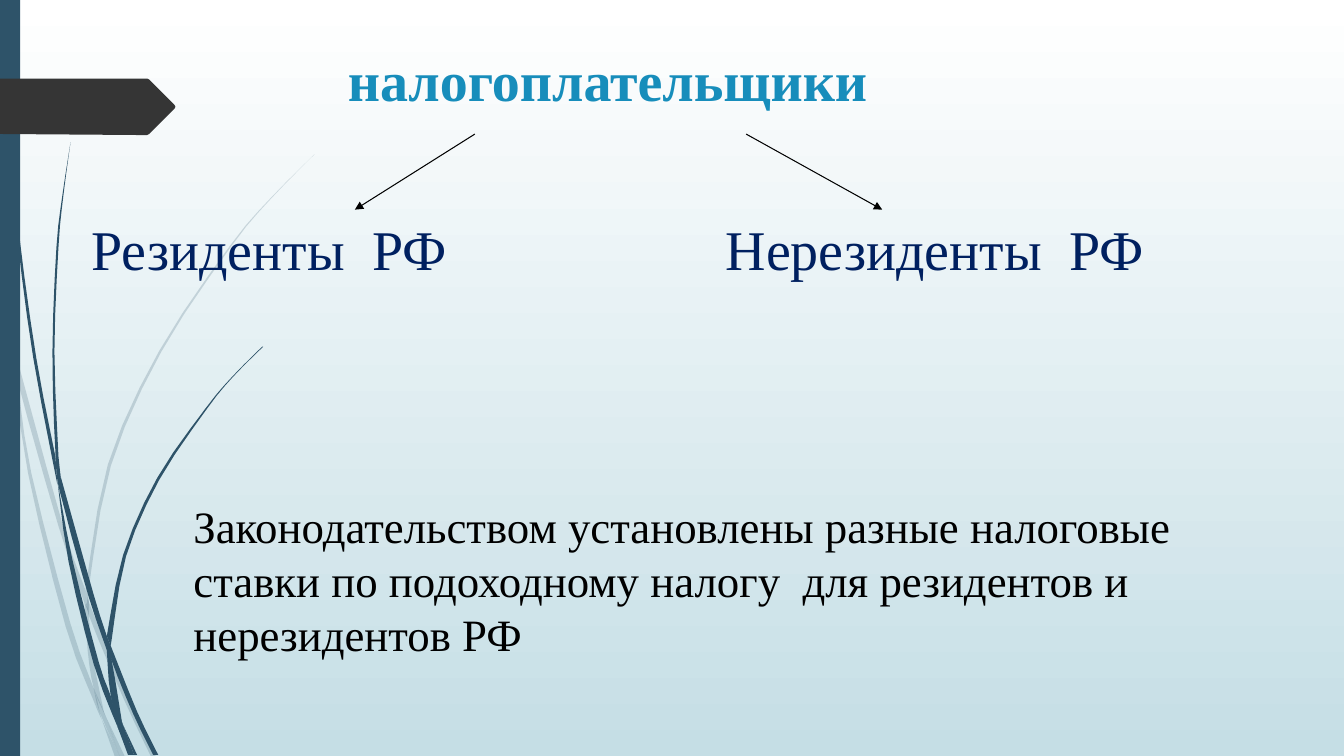
from lxml.etree import SubElement
from pptx import Presentation
from pptx.dml.color import RGBColor
from pptx.enum.shapes import MSO_CONNECTOR, MSO_SHAPE
from pptx.enum.text import MSO_ANCHOR, MSO_AUTO_SIZE, PP_ALIGN
from pptx.oxml.ns import qn
from pptx.util import Inches, Pt

FONT = "Times New Roman"
STEEL = "2E5369"
STEPS = 3

PALE_BLADES = [
    ([(0.11, 3.5), (0.09, 3.22), (0, 2.82)], [(0, 2.99), (0.1, 3.44), (0.11, 3.5)]),
    ([(0.14, 3.45), (0.17, 3.76), (0.58, 5.22), (0.84, 5.99)], [(0.85, 5.86), (0.62, 5.2), (0.14, 3.45)]),
    ([(0.88, 5.96), (0.88, 6.1), (1.23, 6.94), (1.5, 7.51)],
     [(1.55, 7.51), (1.27, 6.92), (0.92, 6.07), (0.88, 5.96)]),
    ([(1.05, 7.11), (1.19, 7.51)], [(1.24, 7.51), (1.05, 7.11)]),
    ([(0.11, 3.5), (0.28, 4.7), (0.65, 6.21), (0.92, 6.93), (1.01, 7.14)],
     [(0.99, 7.07), (0.93, 6.83), (0.7, 6.19), (0.31, 4.69), (0.17, 3.76), (0.11, 3.5)]),
    ([(0.84, 5.99), (0.87, 6.46), (0.93, 6.83), (1.05, 7.11)],
     [(1.03, 7.06), (0.91, 6.46), (0.88, 6.08), (0.84, 5.99)]),
    ([(3.12, 1.53), (2.68, 1.97), (2.28, 2.44), (1.58, 3.48), (1.07, 4.61), (0.85, 5.84)],
     [(0.88, 5.96), (0.88, 5.84), (1.1, 4.62), (1.6, 3.49), (2.29, 2.45), (2.68, 1.98), (3.12, 1.53)]),
    ([(1.01, 7.14), (1.14, 7.51)], [(1.19, 7.51), (1.01, 7.14)]),
    ([(0.88, 6.1), (0.88, 5.96), (0.85, 5.86)], [(0.84, 5.99), (0.88, 6.08)]),
    ([(0.93, 6.83), (0.99, 7.07), (1.19, 7.51)], [(1.19, 7.51), (1.05, 7.11), (0.93, 6.83)]),
]
DARK_BLADES = [
    ([(0.03, 0), (0.07, 1.1), (0.17, 2.33), (0.33, 3.55), (0.57, 4.81)],
     [(0.55, 4.53), (0.36, 3.55), (0.19, 2.32), (0.08, 1.09), (0.04, 0)]),
    ([(0.6, 4.72), (0.64, 5.05), (0.88, 5.92), (1.06, 6.45)], [(1.06, 6.31), (0.93, 5.9), (0.6, 4.72)]),
    ([(1.1, 6.41), (1.11, 6.56), (1.32, 7.08), (1.52, 7.49)], [(1.57, 7.49), (1.36, 7.06), (1.1, 6.41)]),
    ([(0.57, 4.77), (0.68, 5.57), (0.93, 6.59), (1.17, 7.22)],
     [(1.16, 7.17), (1.1, 6.91), (0.98, 6.57), (0.72, 5.56), (0.57, 4.77)]),
    ([(0.7, 1.41), (0.62, 1.93), (0.56, 2.45), (0.52, 3.49), (0.55, 4.49), (0.6, 4.72)],
     [(0.58, 4.53), (0.54, 3.49), (0.58, 2.45), (0.63, 1.93), (0.7, 1.41)]),
    ([(1.22, 7.19), (1.33, 7.49)], [(1.36, 7.49), (1.22, 7.19)]),
    ([(0.55, 4.49), (0.57, 4.77), (0.64, 5.05)], [(0.6, 4.72), (0.55, 4.49)]),
    ([(2.6, 3.44), (2.31, 3.73), (2.04, 4.05), (1.56, 4.74), (1.22, 5.51), (1.06, 6.31)],
     [(1.1, 6.41), (1.11, 6.33), (1.25, 5.52), (1.58, 4.76), (2.05, 4.06), (2.31, 3.74), (2.61, 3.44)]),
    ([(1.17, 7.22), (1.27, 7.49)], [(1.31, 7.49), (1.17, 7.22)]),
    ([(1.06, 6.45), (1.1, 6.91), (1.22, 7.19)], [(1.21, 7.16), (1.11, 6.56), (1.06, 6.45)]),
    ([(1.06, 6.45), (1.11, 6.56)], [(1.1, 6.41), (1.06, 6.31)]),
    ([(1.1, 6.91), (1.17, 7.22), (1.3, 7.49)], [(1.33, 7.49), (1.22, 7.19), (1.1, 6.91)]),
]


def color(value):
    """Turn a hex string into a colour."""
    return RGBColor.from_string(value)


def paint(shape, fill, opacity=100):
    """Give a shape a flat fill with no line or shadow."""
    shape.shadow.inherit = False
    shape.line.fill.background()
    shape.fill.solid()
    shape.fill.fore_color.rgb = color(fill)
    if opacity < 100:
        tint = shape.fill._xPr.find(qn("a:solidFill"))[0]
        SubElement(tint, qn("a:alpha"), val=str(opacity * 1000))


def smooth_curve(points):
    """Return points of a spline through the given points."""
    if len(points) == 2:
        return points
    padded = [points[0], *points, points[-1]]
    curve = []
    for a, b, c, d in zip(padded, padded[1:], padded[2:], padded[3:]):
        for step in range(STEPS):
            t = step / STEPS
            curve.append(tuple(
                q + t * (r - p) / 2
                + t * t * (2 * p - 5 * q + 4 * r - s) / 2
                + t ** 3 * (3 * q - p - 3 * r + s) / 2
                for p, q, r, s in zip(a, b, c, d)))
    return curve + [points[-1]]


def add_outline(slide, left, top, points, fill, opacity=100):
    """Draw a closed outline whose points are measured from left and top."""
    vertices = [(Inches(left + x), Inches(top + y)) for x, y in points]
    builder = slide.shapes.build_freeform(*vertices[0], scale=1.0)
    builder.add_line_segments(vertices[1:], close=True)
    paint(builder.convert_to_shape(), fill, opacity)


def add_decoration(slide, left, top, height):
    """Draw the grass blades, the side band and the dark pointer."""
    for blades, opacity in ((PALE_BLADES, 20), (DARK_BLADES, 100)):
        for near_edge, far_edge in blades:
            outline = smooth_curve(near_edge) + smooth_curve(far_edge)
            add_outline(slide, left, top, outline, STEEL, opacity)
    band = slide.shapes.add_shape(
        MSO_SHAPE.RECTANGLE, Inches(left), Inches(top), Inches(0.2), Inches(height))
    paint(band, STEEL)
    pointer = [(0, 0.78), (1.46, 0.78), (1.48, 0.79), (1.73, 1.04), (1.74, 1.06),
               (1.73, 1.08), (1.48, 1.33), (1.46, 1.34), (1.36, 1.34), (0, 1.33)]
    add_outline(slide, left, top, pointer, "353535")


def write(frame, text, size, text_color, bold=False):
    """Put one formatted paragraph into a text frame."""
    frame.word_wrap = True
    frame.text = text
    paragraph = frame.paragraphs[0]
    paragraph.alignment = PP_ALIGN.LEFT
    paragraph.font.name = FONT
    paragraph.font.size = Pt(size)
    paragraph.font.bold = bold
    paragraph.font.color.rgb = color(text_color)


def add_title(slide, left, top, width, height):
    """Place and format the title placeholder."""
    title = slide.shapes.title
    title.left, title.top = Inches(left), Inches(top)
    title.width, title.height = Inches(width), Inches(height)
    frame = title.text_frame
    write(frame, "налогоплательщики", 40, "178DBB", bold=True)
    frame.auto_size = MSO_AUTO_SIZE.NONE
    frame.vertical_anchor = MSO_ANCHOR.TOP
    frame.margin_top = Inches(0.05)


def add_text(slide, left, top, width, height, text, size, text_color):
    """Add a text box with one paragraph."""
    box = slide.shapes.add_textbox(Inches(left), Inches(top), Inches(width), Inches(height))
    write(box.text_frame, text, size, text_color)


def add_arrow(slide, start, end):
    """Draw a thin black arrow between two points."""
    arrow = slide.shapes.add_connector(
        MSO_CONNECTOR.STRAIGHT, *(Inches(value) for value in (*start, *end)))
    arrow.line.color.rgb = color("000000")
    arrow.line.width = Pt(0.75)
    SubElement(arrow.line._get_or_add_ln(), qn("a:tailEnd"), type="triangle")
    SubElement(arrow._element.spPr, qn("a:effectLst"))


def add_branches(slide, left, top):
    """Draw the two taxpayer groups with an arrow leading to each."""
    branches = [("Резиденты  РФ", 0, 3.9, 2.71), ("Нерезиденты  РФ", 6.29, 6.59, 7.94)]
    for text, offset, arrow_start, arrow_end in branches:
        add_text(slide, left + offset, top + 0.75, 4.42, 0.77, text, 40, "002060")
        add_arrow(slide, (left + arrow_start, top), (left + arrow_end, top + 0.75))


def add_background(slide):
    """Fill the slide with a vertical white to pale blue gradient."""
    fill = slide.background.fill
    fill.gradient()
    fill.gradient_angle = 270
    for stop, value in zip(fill.gradient_stops, ("FFFFFF", "C5DEE5")):
        stop.color.rgb = color(value)


def main():
    """Build and save the taxpayers slide."""
    presentation = Presentation()
    presentation.slide_width = Inches(13.33)
    presentation.slide_height = Inches(7.5)
    slide = presentation.slides.add_slide(presentation.slide_layouts[5])
    add_background(slide)
    add_decoration(slide, 0, 0, 7.5)
    add_title(slide, 3.35, 0.4, 5.96, 1.45)
    add_branches(slide, 0.81, 1.33)
    add_text(
        slide, 1.82, 4.9, 11.15, 1.72,
        "Законодательством установлены разные налоговые  ставки по подоходному "
        "налогу  для резидентов и нерезидентов РФ", 32, "000000")
    presentation.save("out.pptx")


if __name__ == "__main__":
    main()
